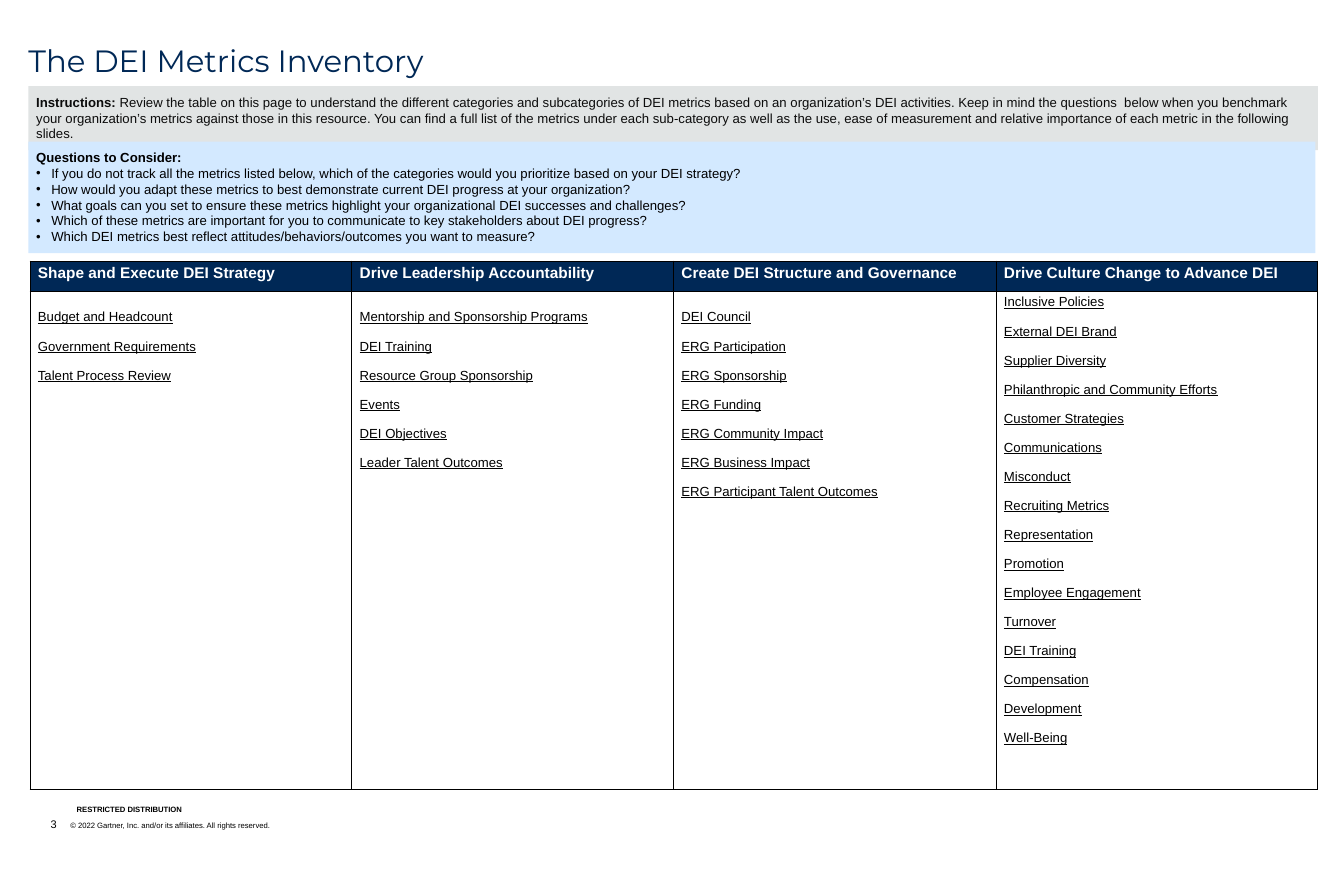
from dataclasses import dataclass

from lxml import etree
from pptx import Presentation
from pptx.dml.color import RGBColor
from pptx.enum.shapes import MSO_SHAPE
from pptx.enum.text import MSO_ANCHOR, PP_ALIGN
from pptx.oxml.ns import qn
from pptx.slide import Slide
from pptx.table import _Cell
from pptx.text.text import TextFrame, _Paragraph
from pptx.util import Emu, Pt

RECTANGLE = MSO_SHAPE.RECTANGLE
TOP, MIDDLE, BOTTOM = MSO_ANCHOR.TOP, MSO_ANCHOR.MIDDLE, MSO_ANCHOR.BOTTOM
LEFT = PP_ALIGN.LEFT

NAVY = RGBColor(0x00, 0x28, 0x56)
GRAY = RGBColor(0xE1, 0xE4, 0xE4)
LIGHT_BLUE = RGBColor(0xD3, 0xE9, 0xFF)
INK = RGBColor(0x0C, 0x0C, 0x0C)
BLACK = RGBColor(0x00, 0x00, 0x00)
WHITE = RGBColor(0xFF, 0xFF, 0xFF)

EMU_PER_PX = 9144
BODY_FONT = "Arial"
TITLE_FONT = "Montserrat"
BORDER_SIDES = ("a:lnL", "a:lnR", "a:lnT", "a:lnB")
ITEM_GAP = Pt(13)


@dataclass(frozen=True)
class Box:
    left: int
    top: int
    width: int
    height: int


@dataclass(frozen=True)
class Category:
    heading: str
    width: int
    top_margin: int
    metrics: tuple[str, ...]


TITLE_BOX = Box(36, 58, 1600, 41)
INSTRUCTIONS_BOX = Box(36, 109, 1631, 81)
QUESTIONS_BOX = Box(36, 179, 1628, 141)
TABLE_BOX = Box(38, 330, 1628, 668)
RESTRICTION_BOX = Box(97, 1018, 323, 11)
COPYRIGHT_BOX = Box(64, 1033, 1019, 17)
HEADER_HEIGHT = 38

INSTRUCTIONS = (
    "Review the table on this page to understand the different categories and subcategories of DEI "
    "metrics based on an organization’s DEI activities. Keep in mind the questions  below when you "
    "benchmark your organization’s metrics against those in this resource. You can find a full list "
    "of the metrics under each sub-category as well as the use, ease of measurement and relative "
    "importance of each metric in the following slides."
)
QUESTIONS = (
    "If you do not track all the metrics listed below, which of the categories would you prioritize "
    "based on your DEI strategy?",
    "How would you adapt these metrics to best demonstrate current DEI progress at your organization?",
    "What goals can you set to ensure these metrics highlight your organizational DEI successes and "
    "challenges?",
    "Which of these metrics are important for you to communicate to key stakeholders about DEI progress?",
    "Which DEI metrics best reflect attitudes/behaviors/outcomes you want to measure?",
)
CATEGORIES = (
    Category("Shape and Execute DEI Strategy", 407, 24, (
        "Budget and Headcount", "Government Requirements", "Talent Process Review",
    )),
    Category("Drive Leadership Accountability", 407, 24, (
        "Mentorship and Sponsorship Programs", "DEI Training", "Resource Group Sponsorship",
        "Events", "DEI Objectives", "Leader Talent Outcomes",
    )),
    Category("Create DEI Structure and Governance", 408, 24, (
        "DEI Council", "ERG Participation", "ERG Sponsorship", "ERG Funding",
        "ERG Community Impact", "ERG Business Impact", "ERG Participant Talent Outcomes",
    )),
    Category("Drive Culture Change to Advance DEI", 406, 5, (
        "Inclusive Policies", "External DEI Brand", "Supplier Diversity",
        "Philanthropic and Community Efforts", "Customer Strategies", "Communications",
        "Misconduct", "Recruiting Metrics", "Representation", "Promotion", "Employee Engagement",
        "Turnover", "DEI Training", "Compensation", "Development", "Well-Being",
    )),
)


def px(length: int) -> Emu:
    return Emu(length * EMU_PER_PX)


def place(box: Box) -> tuple[Emu, Emu, Emu, Emu]:
    return px(box.left), px(box.top), px(box.width), px(box.height)


def write(paragraph: _Paragraph, text: str, *, size: int = 12, color: RGBColor = BLACK,
          bold: bool = False, underline: bool = False, font: str = BODY_FONT) -> None:
    run = paragraph.add_run()
    run.text = text
    run.font.size = Pt(size)
    run.font.name = font
    run.font.color.rgb = color
    run.font.bold = bold
    run.font.underline = underline
    paragraph.alignment = LEFT


def hang(paragraph: _Paragraph, indent: int) -> None:
    properties = paragraph._p.get_or_add_pPr()
    properties.set("marL", str(px(indent)))
    properties.set("indent", str(-px(indent)))


def add_bullet(paragraph: _Paragraph) -> None:
    hang(paragraph, 19)
    properties = paragraph._p.get_or_add_pPr()
    bullet_color = etree.SubElement(properties, qn("a:buClr"))
    etree.SubElement(bullet_color, qn("a:srgbClr"), val=str(BLACK))
    etree.SubElement(properties, qn("a:buFont"), typeface=BODY_FONT)
    etree.SubElement(properties, qn("a:buChar"), char="•")


def set_frame(frame: TextFrame, margin: int, anchor: MSO_ANCHOR) -> None:
    frame.word_wrap = True
    frame.vertical_anchor = anchor
    frame.margin_left = frame.margin_right = px(margin)
    frame.margin_top = frame.margin_bottom = px(margin)


def add_label(slide: Slide, box: Box, anchor: MSO_ANCHOR) -> _Paragraph:
    frame = slide.shapes.add_textbox(*place(box)).text_frame
    set_frame(frame, 0, anchor)
    return frame.paragraphs[0]


def add_panel(slide: Slide, box: Box, fill: RGBColor) -> TextFrame:
    shape = slide.shapes.add_shape(RECTANGLE, *place(box))
    shape.shadow.inherit = False
    shape.fill.solid()
    shape.fill.fore_color.rgb = fill
    shape.line.fill.background()
    set_frame(shape.text_frame, 10, TOP)
    return shape.text_frame


def format_cell(cell: _Cell, top_margin: int) -> None:
    cell.margin_left = cell.margin_right = px(10)
    cell.margin_top, cell.margin_bottom = px(top_margin), px(5)
    cell.vertical_anchor = TOP
    properties = cell._tc.get_or_add_tcPr()
    for side in BORDER_SIDES:
        border = etree.SubElement(properties, qn(side), w=str(Pt(1)))
        border_fill = etree.SubElement(border, qn("a:solidFill"))
        etree.SubElement(border_fill, qn("a:srgbClr"), val=str(BLACK))


def add_metrics_table(slide: Slide) -> None:
    table = slide.shapes.add_table(2, len(CATEGORIES), *place(TABLE_BOX)).table
    table.horz_banding = False
    table.rows[0].height = px(HEADER_HEIGHT)
    table.rows[1].height = px(TABLE_BOX.height - HEADER_HEIGHT)
    for column, category in enumerate(CATEGORIES):
        table.columns[column].width = px(category.width)
        header, body = table.cell(0, column), table.cell(1, column)
        format_cell(header, 5)
        header.fill.solid()
        header.fill.fore_color.rgb = NAVY
        write(header.text_frame.paragraphs[0], category.heading, size=14, color=WHITE, bold=True)
        format_cell(body, category.top_margin)
        body.fill.background()
        for index, metric in enumerate(category.metrics):
            frame = body.text_frame
            paragraph = frame.add_paragraph() if index else frame.paragraphs[0]
            if index:
                paragraph.space_before = ITEM_GAP
            write(paragraph, metric, underline=True)


def main() -> None:
    presentation = Presentation()
    presentation.slide_width, presentation.slide_height = px(1700), px(1100)
    slide = presentation.slides.add_slide(presentation.slide_layouts[6])

    restriction = add_label(slide, RESTRICTION_BOX, BOTTOM)
    restriction.line_spacing = 0.9
    write(restriction, "RESTRICTED DISTRIBUTION", size=7, bold=True)

    copyright_line = add_label(slide, COPYRIGHT_BOX, BOTTOM)
    hang(copyright_line, 25)
    write(copyright_line, "3", size=10)
    write(copyright_line, "\t© 2022 Gartner, Inc. and/or its affiliates. All rights reserved.", size=7)

    title = add_label(slide, TITLE_BOX, MIDDLE)
    title.line_spacing = 0.9
    write(title, "The DEI Metrics Inventory", size=28, color=NAVY, font=TITLE_FONT)

    instructions = add_panel(slide, INSTRUCTIONS_BOX, GRAY).paragraphs[0]
    write(instructions, "Instructions: ", color=INK, bold=True)
    write(instructions, INSTRUCTIONS, color=INK)

    questions = add_panel(slide, QUESTIONS_BOX, LIGHT_BLUE)
    write(questions.paragraphs[0], "Questions to Consider:", bold=True)
    for question in QUESTIONS:
        paragraph = questions.add_paragraph()
        add_bullet(paragraph)
        write(paragraph, question)

    add_metrics_table(slide)
    presentation.save("out.pptx")


if __name__ == "__main__":
    main()
